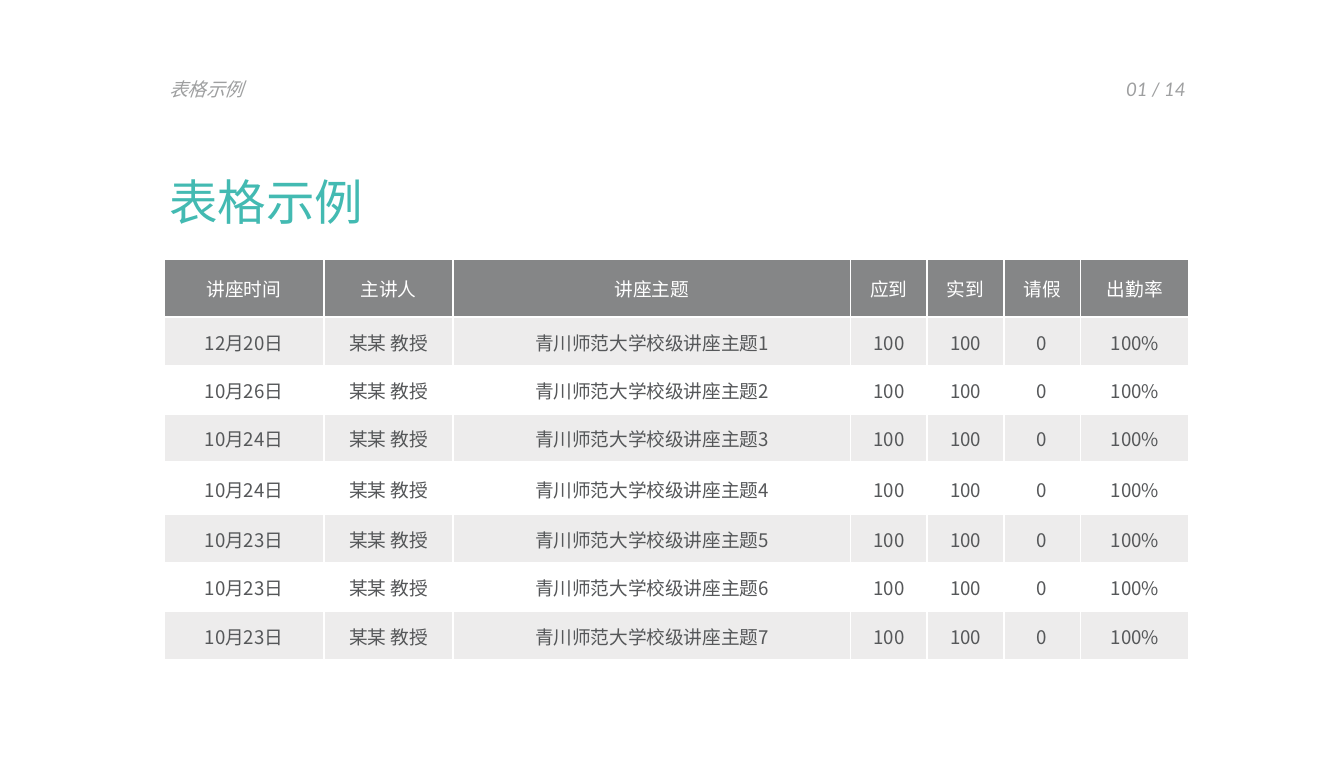
from lxml import etree
from pptx import Presentation
from pptx.dml.color import RGBColor
from pptx.enum import text as t
from pptx.oxml import ns
from pptx.util import Inches, Pt

SANS = "Noto Sans CJK SC"
HEADS = ["讲座时间", "主讲人", "讲座主题", "应到", "实到", "请假", "出勤率"]
DATES = ["12月20日", "10月26日", "10月24日", "10月24日",
         "10月23日", "10月23日", "10月23日"]
WIDTHS = [1.19, 0.96, 2.96, 0.57, 0.57, 0.57, 0.81]
HEIGHTS = [0.43, 0.36, 0.36, 0.36, 0.39, 0.36, 0.36, 0.36]


def color(code):
    """Turn a hex string into a colour."""
    return RGBColor.from_string(code)


def add_run(para, words, size, code, font=SANS, slant=False):
    """Add one styled run, with its font set for Chinese text too."""
    run = para.add_run()
    run.text = words
    run.font.size = Pt(size)
    run.font.italic = slant
    run.font.color.rgb = color(code)
    run.font.name = font
    east = etree.SubElement(run._r.get_or_add_rPr(), ns.qn("a:ea"))
    east.set("typeface", font)


def add_label(slide, box, words, size, code, font=SANS, slant=False,
              align=t.PP_ALIGN.LEFT):
    """Add a text box with one line of text."""
    frame = slide.shapes.add_textbox(*map(Inches, box)).text_frame
    frame.word_wrap = True
    frame.auto_size = t.MSO_AUTO_SIZE.SHAPE_TO_FIT_TEXT
    para = frame.paragraphs[0]
    para.alignment = align
    para.line_spacing = Pt(size)
    add_run(para, words, size, code, font, slant)


def fill_cell(cell, words, ink, back):
    """Fill a table cell and centre its text."""
    cell.fill.solid()
    cell.fill.fore_color.rgb = color(back)
    cell.vertical_anchor = t.MSO_ANCHOR.MIDDLE
    cell.margin_left = cell.margin_top = cell.margin_right = Inches(0.01)
    cell.margin_bottom = 0
    para = cell.text_frame.paragraphs[0]
    para.alignment = t.PP_ALIGN.CENTER
    add_run(para, words, 10, ink)


def add_grid(slide, rows):
    """Add the lecture table with banded rows."""
    box = (1.22, 1.93, sum(WIDTHS), sum(HEIGHTS))
    grid = slide.shapes.add_table(len(rows), len(HEADS),
                                  *map(Inches, box)).table
    for col, width in zip(grid.columns, WIDTHS):
        col.width = Inches(width)
    for i, row in enumerate(rows):
        grid.rows[i].height = Inches(HEIGHTS[i])
        ink = "555759" if i else "FFFFFF"
        back = ("EDECEC" if i % 2 else "FFFFFF") if i else "858687"
        for j, words in enumerate(row):
            fill_cell(grid.cell(i, j), words, ink, back)


def main():
    """Build and save the slide."""
    deck = Presentation()
    deck.slide_width, deck.slide_height = Inches(10), Inches(5.67)
    slide = deck.slides.add_slide(deck.slide_layouts[6])
    rows = [[date, "某某 教授", f"青川师范大学校级讲座主题{i}",
             "100", "100", "0", "100%"] for i, date in enumerate(DATES, 1)]
    add_grid(slide, [HEADS] + rows)
    add_label(slide, (1.16, 0.56, 2.39, 0.24), "表格示例", 10, "9E9FA0",
              slant=True)
    add_label(slide, (1.16, 1.3, 3.68, 0.47), "表格示例", 26, "43BAB2")
    add_label(slide, (7.95, 0.56, 0.97, 0.24), "01 / 14", 10, "9E9FA0",
              "Lato", True, t.PP_ALIGN.RIGHT)
    deck.save("out.pptx")


if __name__ == "__main__":
    main()
